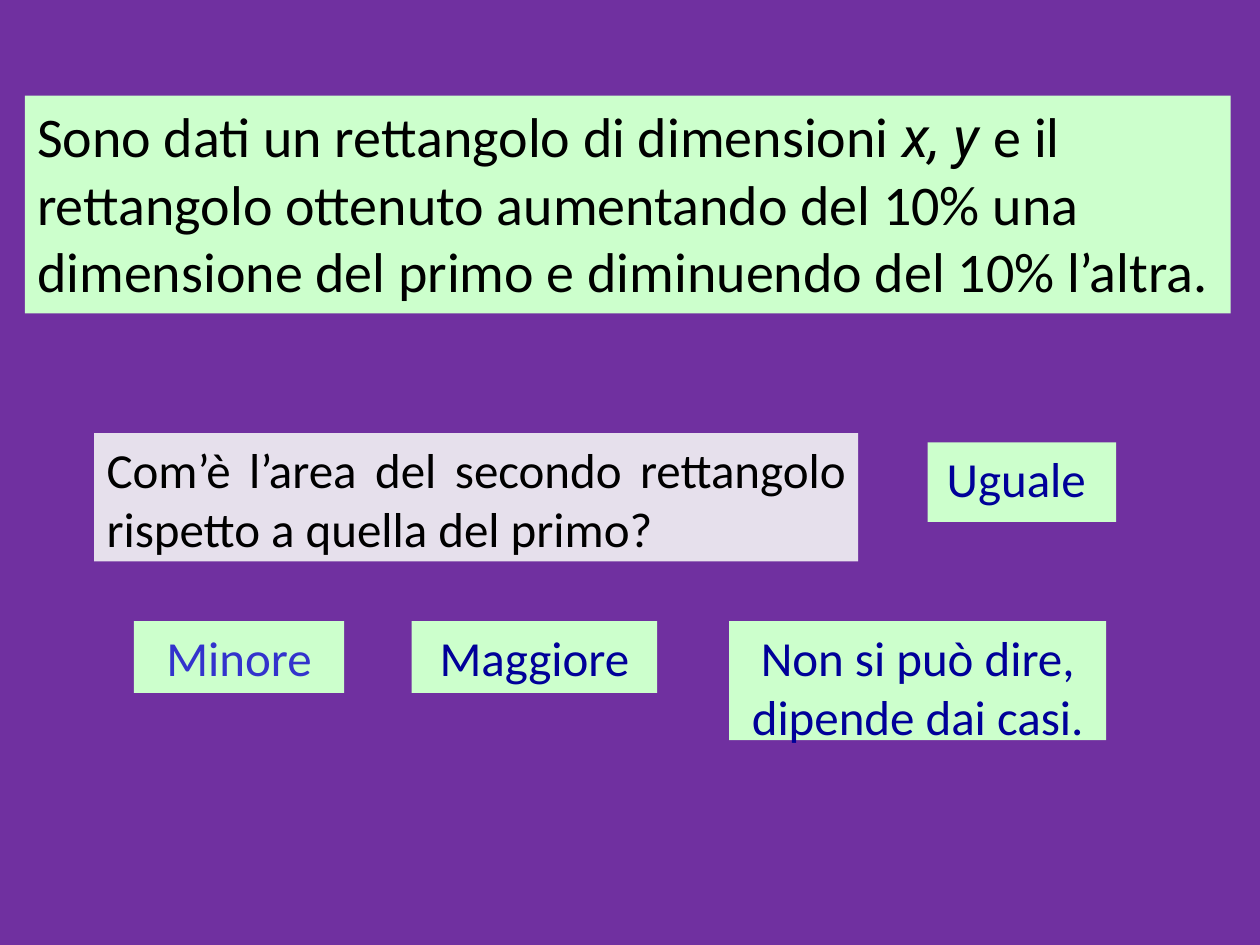
from dataclasses import dataclass

from pptx import Presentation
from pptx.dml.color import RGBColor
from pptx.enum.shapes import MSO_SHAPE
from pptx.enum.text import MSO_ANCHOR, PP_ALIGN
from pptx.util import Cm, Pt


@dataclass(frozen=True)
class Theme:
    background: RGBColor = RGBColor(0x70, 0x30, 0xA0)
    green: RGBColor = RGBColor(0xCC, 0xFF, 0xCC)
    lilac: RGBColor = RGBColor(0xE6, 0xE0, 0xEC)
    black: RGBColor = RGBColor(0, 0, 0)
    navy: RGBColor = RGBColor(0x00, 0x00, 0x99)
    blue: RGBColor = RGBColor(0x33, 0x33, 0xCC)
    font: str = "Calibri"
    variable_font: str = "Roboto"
    premise_size: Pt = Pt(32)
    body_size: Pt = Pt(28)


THEME = Theme()
ANSWER_ROW_TOP = 12.52


def add_panel(slide, left, top, width, height, fill, alignment):
    """Add a borderless filled rectangle and return its first paragraph."""
    shape = slide.shapes.add_shape(
        MSO_SHAPE.RECTANGLE, Cm(left), Cm(top), Cm(width), Cm(height))
    shape.shadow.inherit = False
    shape.fill.solid()
    shape.fill.fore_color.rgb = fill
    shape.line.fill.background()
    text_frame = shape.text_frame
    text_frame.word_wrap = True
    text_frame.vertical_anchor = MSO_ANCHOR.TOP
    paragraph = text_frame.paragraphs[0]
    paragraph.alignment = alignment
    return paragraph


def add_run(paragraph, text, size, color, font=THEME.font, italic=False):
    run = paragraph.add_run()
    run.text = text
    run.font.name = font
    run.font.size = size
    run.font.italic = italic
    run.font.color.rgb = color


def add_premise(slide):
    paragraph = add_panel(slide, 0.5, 1.93, 24.31, 4.39, THEME.green, PP_ALIGN.LEFT)
    style = (THEME.premise_size, THEME.black)
    add_run(paragraph, "Sono dati un rettangolo di dimensioni ", *style)
    add_run(paragraph, "x, y ", *style, font=THEME.variable_font, italic=True)
    add_run(paragraph, "e il rettangolo ottenuto aumentando del 10% una dimensione "
            "del primo e diminuendo del 10% l’altra.", *style)


def add_question(slide):
    paragraph = add_panel(slide, 1.9, 8.73, 15.4, 2.59, THEME.lilac, PP_ALIGN.JUSTIFY)
    add_run(paragraph, "Com’è l’area del secondo rettangolo rispetto a quella del primo?",
            THEME.body_size, THEME.black)


def add_answer(slide, text, left, top, width, height, color=THEME.navy):
    paragraph = add_panel(slide, left, top, width, height, THEME.green, PP_ALIGN.CENTER)
    add_run(paragraph, text, THEME.body_size, color)


def main():
    presentation = Presentation()
    presentation.slide_width = Cm(25.4)
    presentation.slide_height = Cm(19.05)
    slide = presentation.slides.add_slide(presentation.slide_layouts[6])
    slide.background.fill.solid()
    slide.background.fill.fore_color.rgb = THEME.background

    add_question(slide)
    add_premise(slide)
    add_answer(slide, "Uguale ", 18.7, 8.92, 3.8, 1.6)
    add_answer(slide, "Minore", 2.7, ANSWER_ROW_TOP, 4.24, 1.45, THEME.blue)
    add_answer(slide, "Maggiore", 8.3, ANSWER_ROW_TOP, 4.95, 1.45)
    add_answer(slide, "Non si può dire, dipende dai casi.", 14.7, ANSWER_ROW_TOP, 7.6, 2.4)

    presentation.save("out.pptx")


if __name__ == "__main__":
    main()
